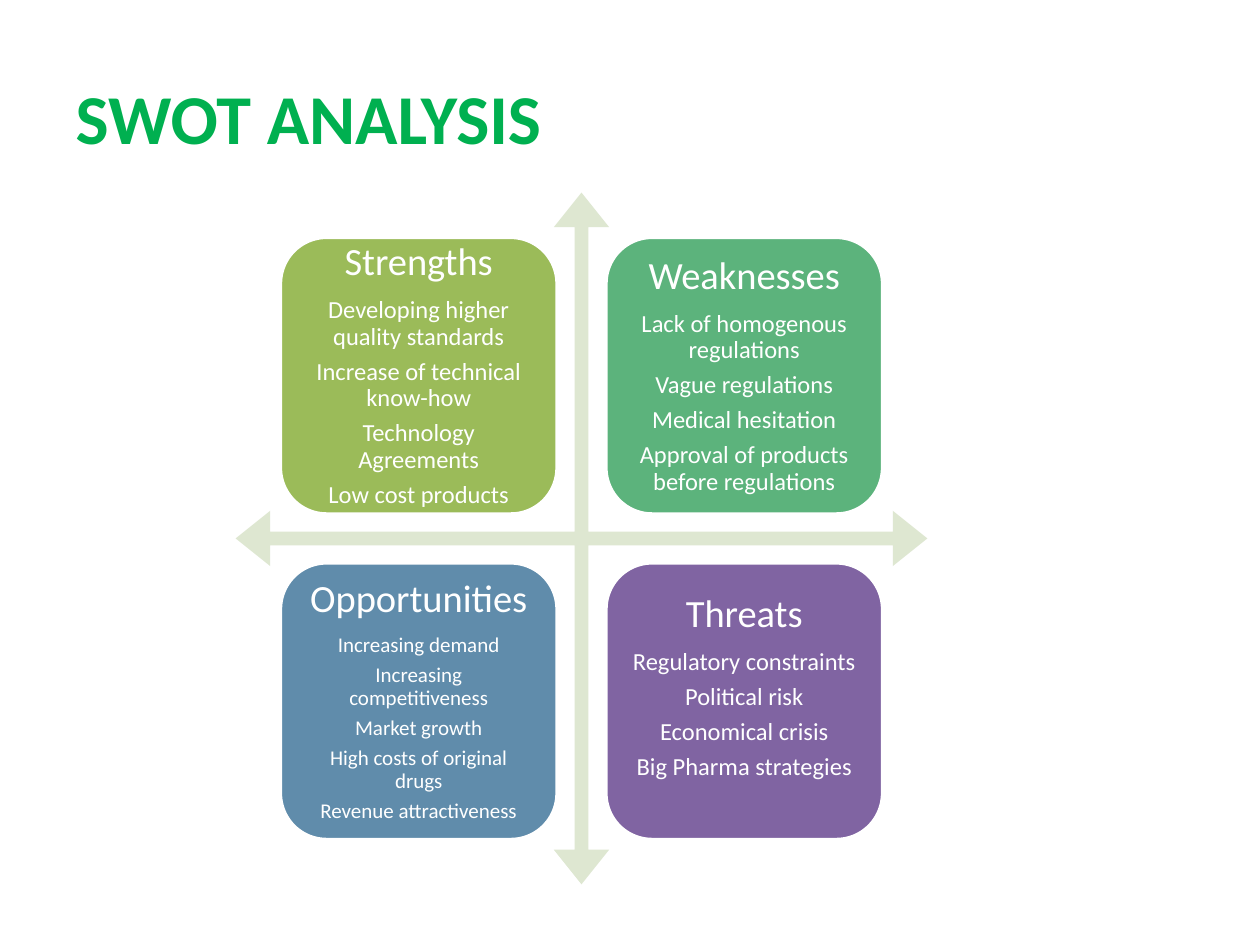
from pptx import Presentation
from pptx.dml.color import RGBColor
from pptx.enum.shapes import MSO_SHAPE
from pptx.enum.text import MSO_ANCHOR, PP_ALIGN
from pptx.util import Pt


def color(code):
    return RGBColor.from_string(code)


class Deck:
    font = "Calibri"
    white = "FFFFFF"
    green = "00B050"
    pale = "DEE7D1"
    inset = 6.6

    def __init__(self):
        self.prs = Presentation()
        self.prs.slide_width, self.prs.slide_height = Pt(720), Pt(540)
        self.slide = self.prs.slides.add_slide(self.prs.slide_layouts[5])

    def style(self, par, size, code, bold=False):
        for run in par.runs:
            font = run.font
            font.name, font.size, font.bold = self.font, Pt(size), bold
            font.color.rgb = color(code)

    def title(self, text, x, y, w, h):
        shape = self.slide.shapes.title
        shape.left, shape.top, shape.width, shape.height = map(Pt, (x, y, w, h))
        frame = shape.text_frame
        frame.text = text
        frame.vertical_anchor = MSO_ANCHOR.MIDDLE
        frame.paragraphs[0].alignment = PP_ALIGN.LEFT
        self.style(frame.paragraphs[0], 40, self.green, True)

    def shape(self, kind, x, y, side, fill):
        shape = self.slide.shapes.add_shape(kind, *map(Pt, (x, y, side, side)))
        shape.shadow.inherit = False
        shape.fill.solid()
        shape.fill.fore_color.rgb = color(fill)
        return shape

    def cross(self, x, y, side):
        arrow = self.shape(MSO_SHAPE.QUAD_ARROW, x, y, side, self.pale)
        arrow.line.fill.background()
        for i, value in enumerate((0.02, 0.04, 0.05)):
            arrow.adjustments[i] = value

    def card(self, x, y, side, fill, head, items, size, lift):
        box = self.shape(MSO_SHAPE.ROUNDED_RECTANGLE, x, y, side, fill)
        box.line.color.rgb = color(self.white)
        box.line.width = Pt(2)
        frame = box.text_frame
        frame.word_wrap = True
        frame.vertical_anchor = MSO_ANCHOR.MIDDLE
        frame.margin_left = frame.margin_right = frame.margin_top = Pt(self.inset)
        frame.margin_bottom = Pt(self.inset + lift)
        frame.text = "\n".join([head] + items)
        for i, par in enumerate(frame.paragraphs):
            points = size if i else 22
            par.alignment = PP_ALIGN.CENTER
            par.line_spacing = 0.9
            par.space_after = Pt(round(0.35 * points, 1))
            self.style(par, points, self.white)


# Fill, heading, items, item size, upward shift of the text
CARDS = [
    ("9BBB59", "Strengths",
     ["Developing higher quality standards", "Increase of technical know-how",
      "Technology Agreements", "Low cost products"], 14, 0),
    ("5CB37C", "Weaknesses",
     ["Lack of homogenous regulations", "Vague regulations",
      "Medical hesitation", "Approval of products before regulations"], 14, 0),
    ("608CAB", "Opportunities",
     ["Increasing demand", "Increasing competitiveness", "Market growth",
      "High costs of original drugs", "Revenue attractiveness"], 12, 0),
    ("8064A2", "Threats",
     ["Regulatory constraints", "Political risk", "Economical crisis",
      "Big Pharma strategies"], 14, 16),
]


def main():
    deck = Deck()
    deck.title("SWOT ANALYSIS", 36, 21.6, 648, 90)

    # Crossed axes
    mid_x, mid_y, span = 332.3, 307.7, 395.3
    deck.cross(mid_x - span / 2, mid_y - span / 2, span)

    # Two by two grid of cards around the centre
    side, step = 158.1, 186
    left, top = mid_x - (step + side) / 2, mid_y - (step + side) / 2
    for i, (fill, head, items, size, lift) in enumerate(CARDS):
        row, col = divmod(i, 2)
        deck.card(left + col * step, top + row * step, side,
                  fill, head, items, size, lift)

    deck.prs.save("out.pptx")


if __name__ == "__main__":
    main()
